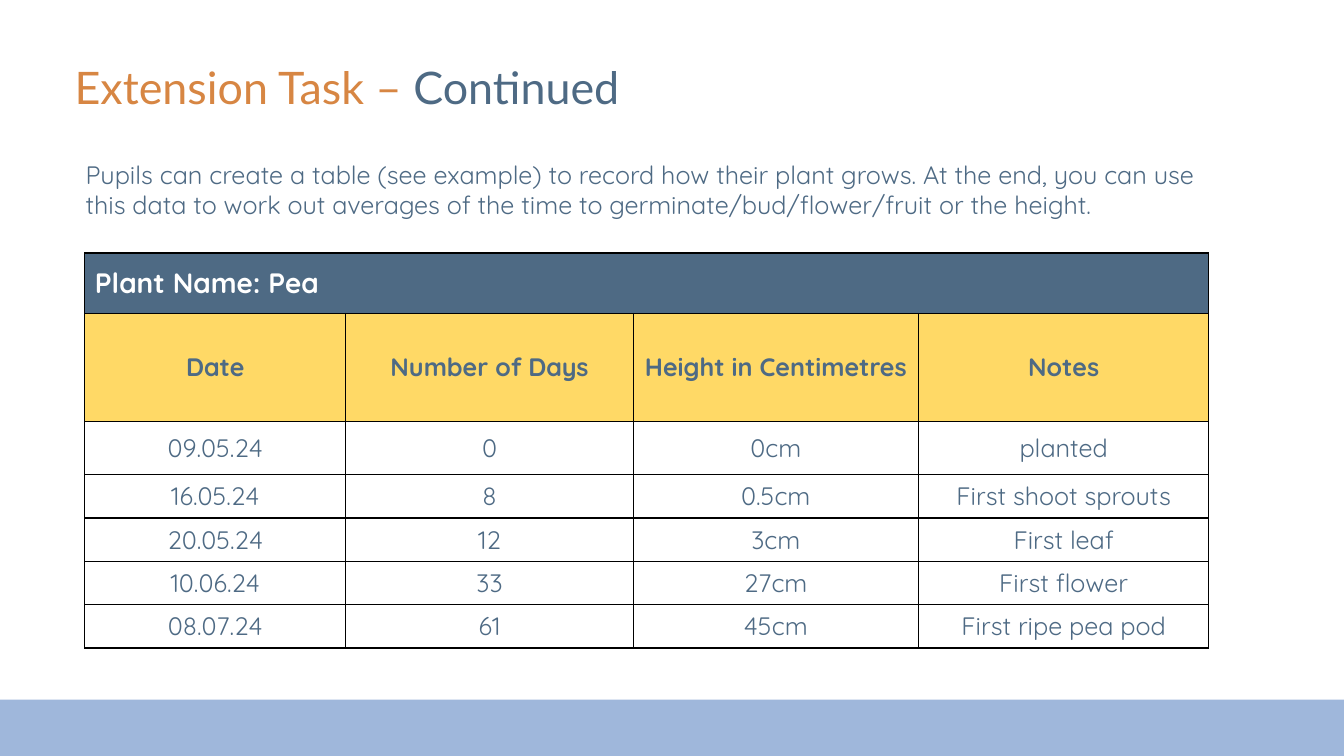
from lxml.etree import SubElement
from pptx import Presentation
from pptx.dml.color import RGBColor
from pptx.enum.shapes import MSO_SHAPE
from pptx.enum.text import MSO_ANCHOR, MSO_AUTO_SIZE, PP_ALIGN
from pptx.oxml.ns import qn
from pptx.util import Inches, Pt

ORANGE = RGBColor(0xD7, 0x86, 0x43)
SLATE = RGBColor(0x4E, 0x6A, 0x84)
SKY = RGBColor(0x9F, 0xB7, 0xDB)
YELLOW = RGBColor(0xFF, 0xD9, 0x66)
WHITE = RGBColor(0xFF, 0xFF, 0xFF)
BLACK = RGBColor(0x00, 0x00, 0x00)


def style_font(font, name, size, color, bold=False):
    font.name = name
    font.size = Pt(size)
    font.bold = bold
    font.color.rgb = color


def add_borders(cell):
    properties = cell._tc.get_or_add_tcPr()
    for side in ("lnL", "lnR", "lnT", "lnB"):
        line = SubElement(properties, qn(f"a:{side}"), w=str(Pt(1)))
        fill = SubElement(line, qn("a:solidFill"))
        SubElement(fill, qn("a:srgbClr"), val=str(BLACK))


deck = Presentation()
deck.slide_width = Inches(13.33)
deck.slide_height = Inches(7.5)
page = deck.slides.add_slide(deck.slide_layouts[5])

title = page.shapes.title
title.left, title.top = Inches(0.64), Inches(0.51)
title.width, title.height = Inches(11.06), Inches(0.64)
title.text_frame.auto_size = MSO_AUTO_SIZE.NONE
title.text_frame.vertical_anchor = MSO_ANCHOR.TOP
para = title.text_frame.paragraphs[0]
para.alignment = PP_ALIGN.LEFT
para.line_spacing = 1.07
for text, color in (("Extension Task – ", ORANGE), ("Continued", SLATE)):
    span = para.add_run()
    span.text = text
    style_font(span.font, "Lato", 32, color)

band = page.shapes.add_shape(
    MSO_SHAPE.RECTANGLE, 0, Inches(6.94), deck.slide_width, Inches(0.56)
)
band.shadow.inherit = False
band.fill.solid()
band.fill.fore_color.rgb = SKY
band.line.fill.background()

intro = page.shapes.add_textbox(Inches(0.75), Inches(1.53), Inches(11.48), Inches(0.71))
intro.text_frame.word_wrap = True
para = intro.text_frame.paragraphs[0]
para.text = (
    "Pupils can create a table (see example) to record how their plant grows. "
    "At the end, you can use this data to work out averages of the time to "
    "germinate/bud/flower/fruit or the height."
)
style_font(para.font, "Quicksand", 18, SLATE)

column_widths = (2.59, 2.85, 2.83, 2.88)
row_heights = (0.6, 1.07, 0.53, 0.43, 0.43, 0.43, 0.43)
records = (
    ("Plant Name: Pea", "", "", ""),
    ("Date", "Number of Days", "Height in Centimetres", "Notes"),
    ("09.05.24", "0", "0cm", "planted"),
    ("16.05.24", "8", "0.5cm", "First shoot sprouts"),
    ("20.05.24", "12", "3cm", "First leaf"),
    ("10.06.24", "33", "27cm", "First flower"),
    ("08.07.24", "61", "45cm", "First ripe pea pod"),
)
frame = page.shapes.add_table(
    len(records), len(column_widths),
    Inches(0.84), Inches(2.51), Inches(11.15), Inches(3.92),
)
table = frame.table
table.horz_banding = False
for column, width in zip(table.columns, column_widths):
    column.width = Inches(width)
for row, height in zip(table.rows, row_heights):
    row.height = Inches(height)
table.cell(0, 0).merge(table.cell(0, 3))

row_fills = {0: SLATE, 1: YELLOW}
for row_index, record in enumerate(records):
    is_banner = row_index == 0
    for column_index, text in enumerate(record):
        cell = table.cell(row_index, column_index)
        add_borders(cell)
        if row_index in row_fills:
            cell.fill.solid()
            cell.fill.fore_color.rgb = row_fills[row_index]
        else:
            cell.fill.background()
        cell.vertical_anchor = MSO_ANCHOR.MIDDLE
        para = cell.text_frame.paragraphs[0]
        para.text = text
        para.alignment = PP_ALIGN.LEFT if is_banner else PP_ALIGN.CENTER
        style_font(
            para.font, "Quicksand", 20 if is_banner else 18,
            WHITE if is_banner else SLATE, row_index in row_fills,
        )

deck.save("out.pptx")
